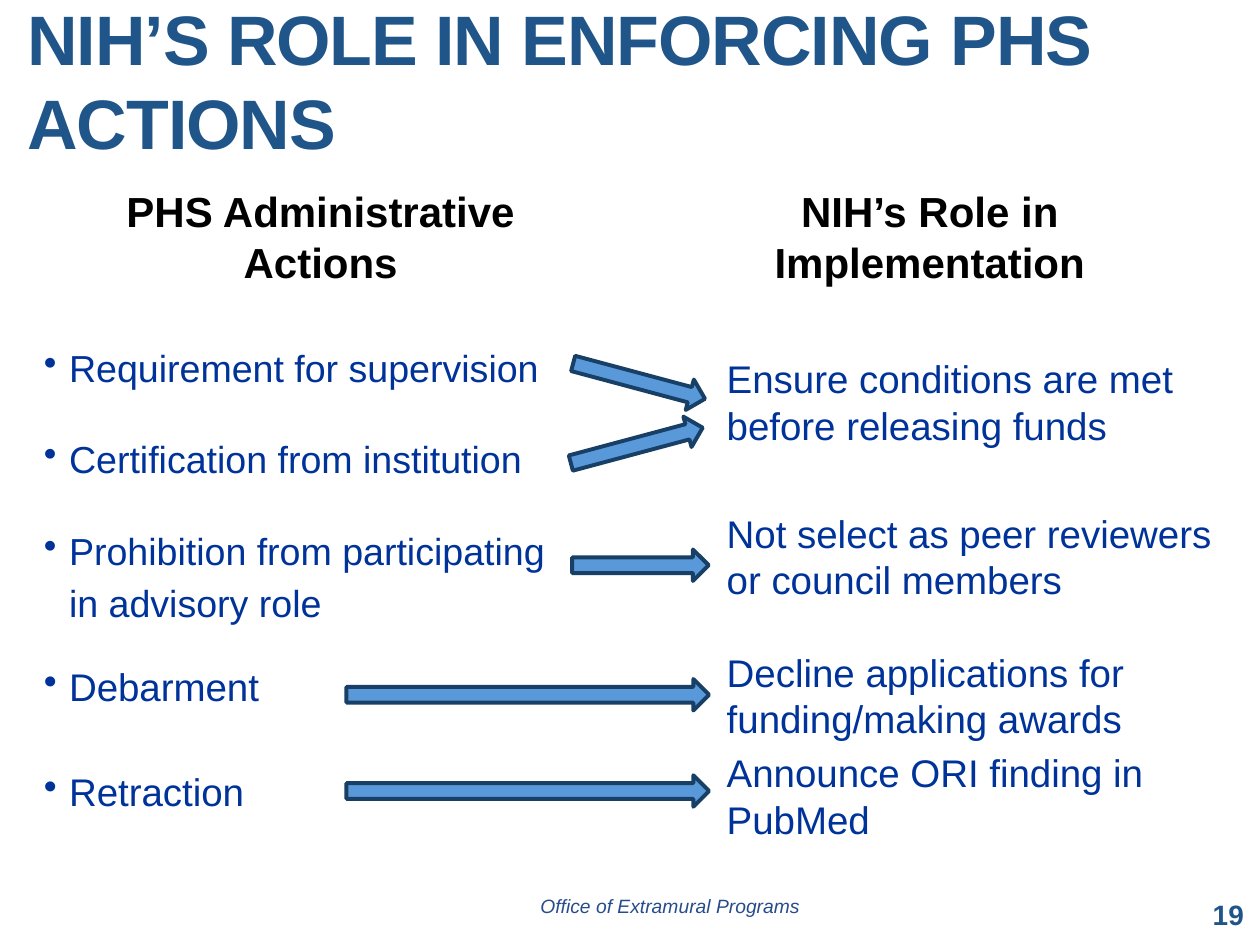
from dataclasses import dataclass

from lxml import etree
from pptx import Presentation
from pptx.dml.color import RGBColor
from pptx.enum import shapes, text
from pptx.oxml import ns
from pptx.util import Pt


@dataclass(frozen=True)
class Theme:
    font: str = "Arial"
    heading: str = "20558A"
    body: str = "003399"
    footer: str = "274C8B"
    black: str = "000000"
    arrow_fill: str = "5999D9"
    arrow_line: str = "183F66"
    title_size: float = 40
    column_size: float = 24
    body_size: float = 22
    action_size: float = 21.5
    number_size: float = 16
    footer_size: float = 11


@dataclass
class Paragraph:
    words: str
    size: float
    before: float = 0
    after: float = 0


class SlideWriter:
    def __init__(self, slide, theme):
        self.slide = slide
        self.theme = theme

    def text_box(self, box, paragraphs, color, line=None, align=text.PP_ALIGN.LEFT,
                 anchor=text.MSO_ANCHOR.TOP, bold=False, italic=False,
                 indent=0, bullet=False, tracking=0):
        frame = self.slide.shapes.add_textbox(*map(Pt, box)).text_frame
        frame.word_wrap = True
        frame.vertical_anchor = anchor
        for index, item in enumerate(paragraphs):
            para = frame.add_paragraph() if index else frame.paragraphs[0]
            props = para._p.get_or_add_pPr()
            if indent:
                props.set("marL", str(Pt(indent)))
            if bullet:
                props.set("indent", str(Pt(-indent)))
                etree.SubElement(props, ns.qn("a:buChar")).set("char", "•")
            para.alignment = align
            para.space_before = Pt(item.before)
            para.space_after = Pt(item.after)
            if line:
                para.line_spacing = Pt(line)
            run = para.add_run()
            run.text = item.words
            font = run.font
            font.name = self.theme.font
            font.size = Pt(item.size)
            font.bold = bold
            font.italic = italic
            font.color.rgb = RGBColor.from_string(color)
            if tracking:
                run._r.get_or_add_rPr().set("spc", str(round(tracking * 100)))

    def arrow(self, left, top, width, rotation=0):
        arrow = self.slide.shapes.add_shape(
            shapes.MSO_SHAPE.RIGHT_ARROW, Pt(left), Pt(top), Pt(width), Pt(18))
        arrow.rotation = rotation
        arrow.shadow.inherit = False
        arrow.fill.solid()
        arrow.fill.fore_color.rgb = RGBColor.from_string(self.theme.arrow_fill)
        arrow.line.color.rgb = RGBColor.from_string(self.theme.arrow_line)
        arrow.line.width = Pt(2.25)


def main():
    deck = Presentation()
    deck.slide_width, deck.slide_height = Pt(720), Pt(540)
    theme = Theme()
    writer = SlideWriter(deck.slides.add_slide(deck.slide_layouts[6]), theme)

    # Title
    writer.text_box(
        (8.6, -5.8, 692.6, 84.2),
        [Paragraph("NIH’S ROLE IN ENFORCING PHS ACTIONS", theme.title_size)],
        theme.heading, line=48, bold=True, tracking=-0.6)

    # Column headings
    for left, width, heading in (
        (30.2, 306, "PHS Administrative Actions"),
        (372.2, 318.2, "NIH’s Role in Implementation"),
    ):
        writer.text_box(
            (left, 102.2, width, 65.5), [Paragraph(heading, theme.column_size)],
            theme.black, line=29, align=text.PP_ALIGN.CENTER, bold=True)

    # Administrative actions
    actions = [
        Paragraph("Requirement for supervision", theme.action_size, 0, 18),
        Paragraph("Certification from institution", theme.action_size, 4.3, 18),
        Paragraph("Prohibition from participating in advisory role",
                  theme.action_size, 4.3, 6),
        Paragraph("Debarment", theme.body_size, 12, 18),
        Paragraph("Retraction", theme.body_size, 12),
    ]
    writer.text_box((18, 189.2, 306.7, 282.2), actions, theme.body,
                    line=30, indent=14.4, bullet=True)

    # Roles in implementation
    roles = [
        Paragraph("Ensure conditions are met before releasing funds", theme.body_size),
        Paragraph("Not select as peer reviewers or council members",
                  theme.body_size, 35.2),
        Paragraph("Decline applications for funding/making awards",
                  theme.body_size, 26.5),
        Paragraph("Announce ORI finding in PubMed", theme.body_size, 4.4),
    ]
    writer.text_box((393.8, 199.4, 318.2, 288), roles, theme.body,
                    line=26.5, indent=14.4)

    # Arrows from each action to its role
    short, long = 78, 207.2
    writer.arrow(326.2, 208.8, short, rotation=15)
    writer.arrow(324.9, 245.5, short, rotation=345)
    writer.arrow(327, 314, short)
    for top in (388, 443):
        writer.arrow(198, top, long)

    # Footer and slide number
    writer.text_box(
        (301.7, 507.6, 200.9, 20.9),
        [Paragraph("Office of Extramural Programs", theme.footer_size)],
        theme.footer, italic=True)
    writer.text_box(
        (649.4, 508.3, 68.4, 28.8), [Paragraph("19", theme.number_size)],
        theme.heading, align=text.PP_ALIGN.RIGHT,
        anchor=text.MSO_ANCHOR.MIDDLE, bold=True)

    deck.save("out.pptx")


if __name__ == "__main__":
    main()
